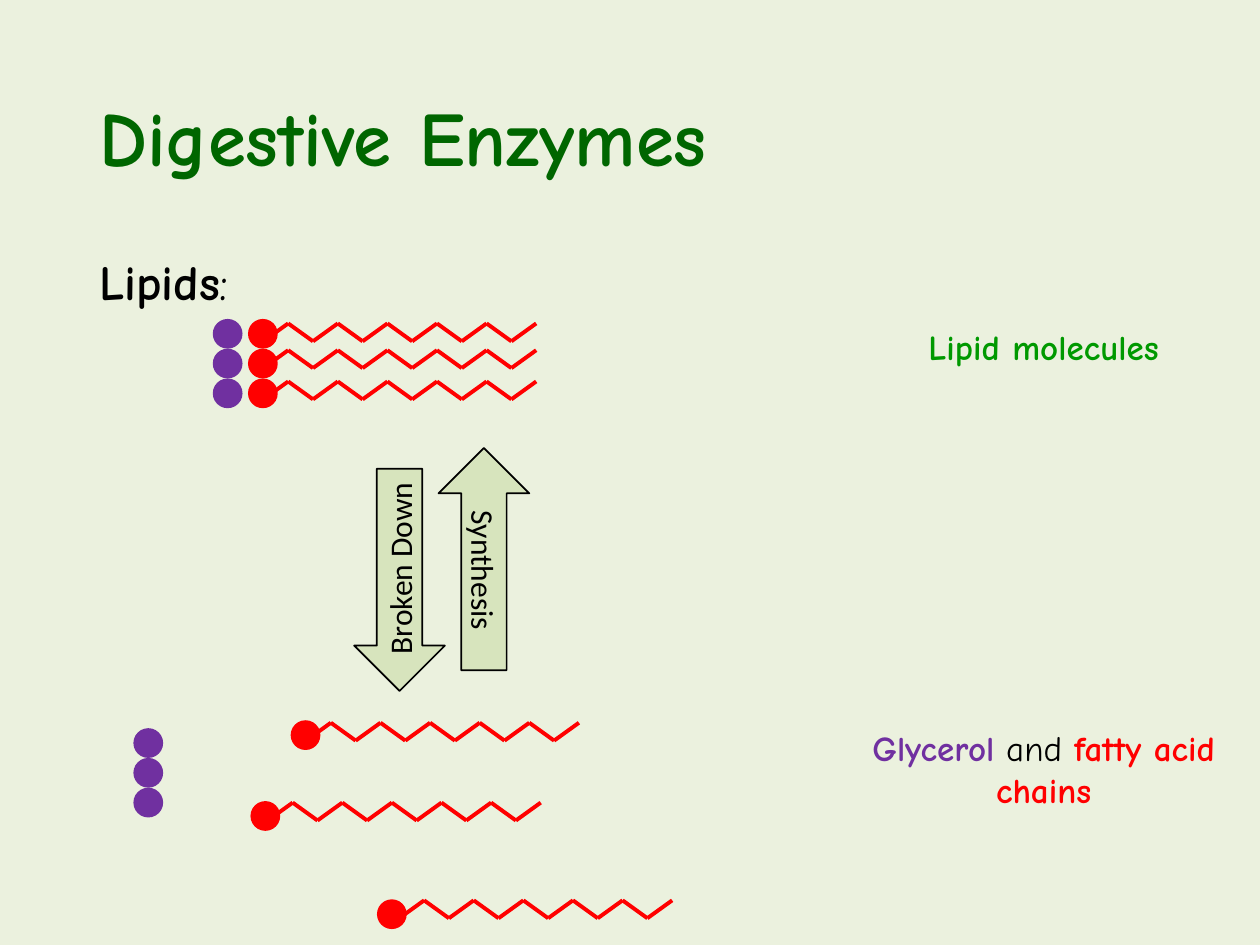
from lxml import etree
from pptx import Presentation
from pptx.dml.color import RGBColor
from pptx.enum.shapes import MSO_CONNECTOR, MSO_SHAPE
from pptx.enum.text import MSO_ANCHOR, PP_ALIGN
from pptx.oxml.ns import qn
from pptx.util import Cm, Pt

OVAL, DOWN_ARROW = MSO_SHAPE.OVAL, MSO_SHAPE.DOWN_ARROW
STRAIGHT = MSO_CONNECTOR.STRAIGHT
LEFT, CENTER = PP_ALIGN.LEFT, PP_ALIGN.CENTER
TOP, MIDDLE = MSO_ANCHOR.TOP, MSO_ANCHOR.MIDDLE

BACKGROUND = RGBColor(0xEB, 0xF1, 0xDE)
DARK_GREEN = RGBColor(0x00, 0x66, 0x00)
GREEN = RGBColor(0x00, 0x99, 0x00)
PALE_GREEN = RGBColor(0xD7, 0xE4, 0xBD)
PURPLE = RGBColor(0x70, 0x30, 0xA0)
RED = RGBColor(0xFF, 0x00, 0x00)
BLACK = RGBColor(0x00, 0x00, 0x00)

BALL = 0.6          # diameter of a molecule's ball, cm
STEP, RISE = 0.5, 0.36  # one zigzag segment, cm
SEGMENTS = 11


def write_text(shape, *runs, size, font="Comic Neue", align=LEFT, anchor=TOP, spacing=1.0):
    """Fill a shape with one paragraph of (text, colour, bold) runs."""
    frame = shape.text_frame
    frame.word_wrap = True
    frame.vertical_anchor = anchor
    paragraph = frame.paragraphs[0]
    paragraph.alignment = align
    paragraph.line_spacing = spacing
    for text, color, bold in runs:
        run = paragraph.add_run()
        run.text = text
        run.font.name = font
        run.font.size = Pt(size)
        run.font.bold = bold
        run.font.color.rgb = color


def add_ball(group, left, top, color):
    ball = group.shapes.add_shape(OVAL, Cm(left), Cm(top), Cm(BALL), Cm(BALL))
    ball.shadow.inherit = False
    ball.fill.solid()
    ball.fill.fore_color.rgb = color
    ball.line.fill.background()


presentation = Presentation()
presentation.slide_width, presentation.slide_height = Cm(25.4), Cm(19.05)
slide = presentation.slides.add_slide(presentation.slide_layouts[6])
slide.background.fill.solid()
slide.background.fill.fore_color.rgb = BACKGROUND

# Title, heading and labels
title = slide.shapes.add_textbox(Cm(1.75), Cm(1.01), Cm(21.9), Cm(3.68))
write_text(title, ("Digestive Enzymes", DARK_GREEN, True), size=44, anchor=MIDDLE, spacing=0.9)

heading = slide.shapes.add_textbox(Cm(1.75), Cm(5.07), Cm(21.9), Cm(12.09))
write_text(heading, ("Lipids", BLACK, True), (":", BLACK, False), size=28, spacing=0.9)

lipid_label = slide.shapes.add_textbox(Cm(17.14), Cm(6.43), Cm(7.8), Cm(1.11))
write_text(lipid_label, ("Lipid molecules", GREEN, True), size=20, align=CENTER)

product_label = slide.shapes.add_textbox(Cm(17.14), Cm(14.53), Cm(7.8), Cm(1.97))
write_text(product_label, ("Glycerol", PURPLE, True), (" and ", BLACK, False),
           ("fatty acid chains", RED, True), size=20, align=CENTER)

# Reaction arrows
for text, left, top, rotation in (("Broken Down", 7.14, 9.45, 0), ("Synthesis", 8.84, 9.03, 180)):
    arrow = slide.shapes.add_shape(DOWN_ARROW, Cm(left), Cm(top), Cm(1.83), Cm(4.48))
    arrow.rotation = rotation
    arrow.shadow.inherit = False
    arrow.fill.solid()
    arrow.fill.fore_color.rgb = PALE_GREEN
    arrow.line.color.rgb = BLACK
    arrow.line.width = Pt(1)
    write_text(arrow, (text, BLACK, False), size=18, font="Calibri", align=CENTER, anchor=MIDDLE)
    arrow.element.txBody.find(qn("a:bodyPr")).set("vert", "vert270")

# Groups: the whole lipid, free glycerol and three free fatty acids
lipid, glycerol, *fatty_acids = [slide.shapes.add_group_shape() for _ in range(5)]

# Glycerol: three stacked balls
for group, left, top in ((lipid, 4.29, 6.43), (glycerol, 2.69, 14.68)):
    for row in range(3):
        add_ball(group, left, top + row * BALL, PURPLE)

# Fatty acids: group, ball left and top, zigzag start and baseline
chains = (
    (lipid, 5.0, 6.43, 5.31, 6.88),
    (lipid, 5.0, 7.03, 5.31, 7.42),
    (lipid, 5.0, 7.63, 5.31, 8.05),
    (fatty_acids[0], 5.86, 14.52, 6.17, 14.93),
    (fatty_acids[1], 5.05, 16.15, 5.4, 16.54),
    (fatty_acids[2], 7.6, 18.13, 8.05, 18.51),
)
for group, ball_left, ball_top, start, baseline in chains:
    add_ball(group, ball_left, ball_top, RED)
    joints = [(Cm(start + i * STEP), Cm(baseline - i % 2 * RISE)) for i in range(SEGMENTS + 1)]
    for begin, end in zip(joints, joints[1:]):
        bond = group.shapes.add_connector(STRAIGHT, *begin, *end)
        bond.line.color.rgb = RED
        bond.line.width = Pt(2.25)
        etree.SubElement(bond.element.spPr, qn("a:effectLst"))

presentation.save("out.pptx")
